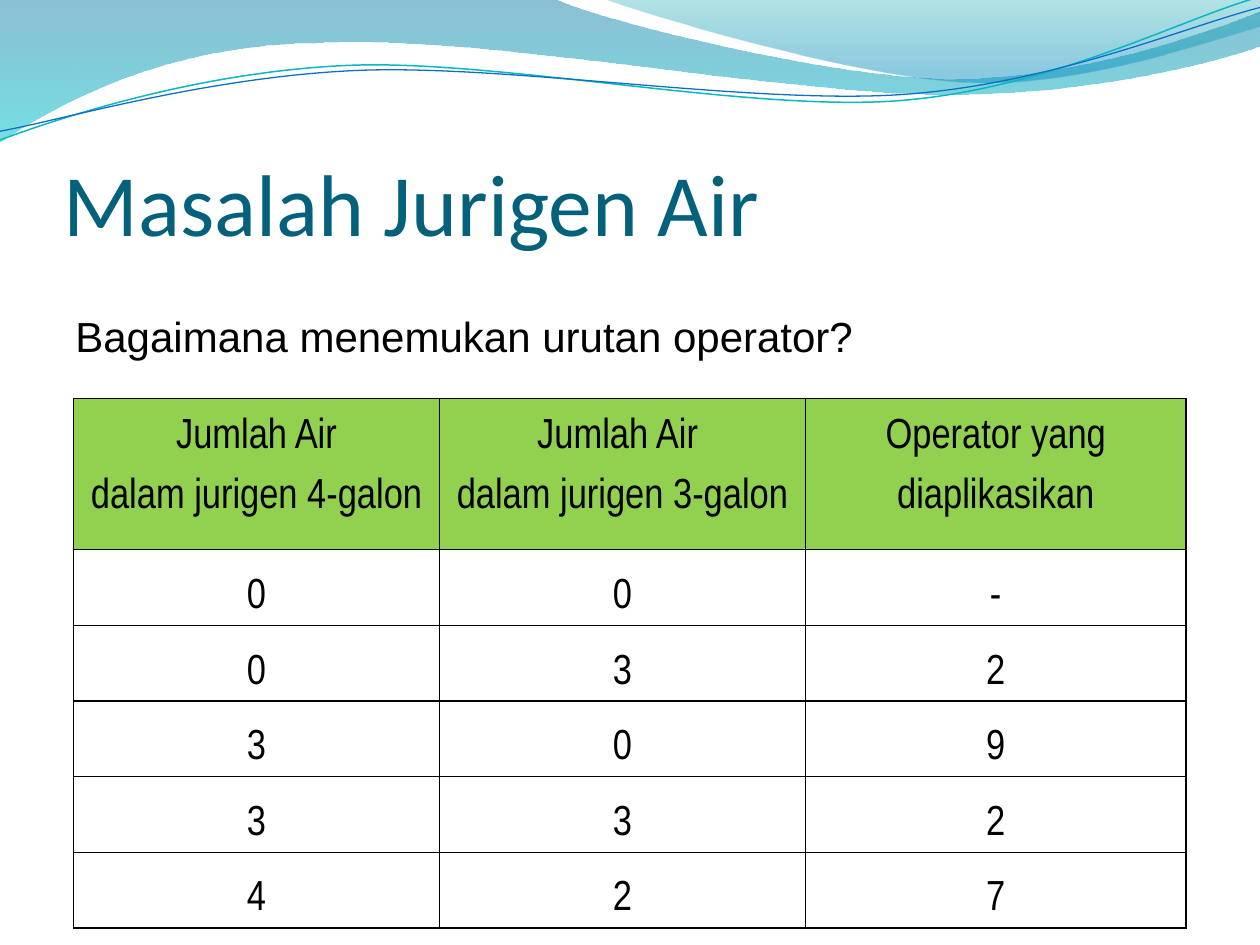
from lxml.etree import SubElement
from pptx import Presentation
from pptx.dml.color import RGBColor
from pptx.enum.text import MSO_ANCHOR as Anchor, MSO_AUTO_SIZE as AutoSize, PP_ALIGN as Align
from pptx.oxml.ns import qn
from pptx.util import Pt

BLACK = RGBColor(0x00, 0x00, 0x00)
TITLE_BLUE = RGBColor(0x04, 0x61, 0x7B)
HEADER_GREEN = RGBColor(0x92, 0xD0, 0x50)
DEEP_BLUE = RGBColor(0x00, 0x74, 0xA1)
CYAN = RGBColor(0x00, 0xC6, 0xCF)
TEAL = RGBColor(0x00, 0xA1, 0xA9)
SKY_BLUE = RGBColor(0x00, 0x8B, 0xBF)
LINE_TEAL = RGBColor(0x0A, 0xB8, 0xBF)
LINE_BLUE = RGBColor(0x0F, 0x6F, 0xC6)

LARGE_WAVE = [
    [(0, -0.7)],
    [(317, -0.7)],
    [(343, 12), (478, 45), (546, 45)],
    [(614, 45), (690, 19), (720, 6.5)],
    [(721, 26)],
    [(708, 32), (626, 55), (537, 54)],
    [(448, 54), (275, 20), (185, 24.5)],
    [(93, 25), (33, 60), (-0.7, 81.4)],
]
SMALL_WAVE = [
    [(345, -0.7)],
    [(367, 8), (491, 44.6), (554, 46.8)],
    [(616, 49.7), (692, 23), (720, 15)],
    [(720, 0)],
]
TEAL_STRAND = [
    [(0, 80)],
    [(35, 67), (114, 41), (199, 37.4)],
    [(284, 33.8), (427, 64), (513, 57.6)],
    [(600, 51), (675, 10.8), (718.5, -1.4)],
]
BLUE_STRAND = [
    [(0, 75)],
    [(34, 69), (118, 44), (204, 40.3)],
    [(290, 36.7), (430, 60), (516, 54)],
    [(602, 48), (678, 15), (720, 4.3)],
]

TITLE_FONT = {"name": "Calibri", "size": Pt(50)}
QUESTION_FONT = {"name": "Arial", "size": Pt(24)}
CELL_FONT = {"name": "Arial Narrow", "size": Pt(24)}
CELL_MARGINS = {"margin_left": Pt(5), "margin_right": Pt(5), "margin_top": 0, "margin_bottom": 0}

COLUMN_WIDTHS = [209.1, 209.1, 217.6]
HEADER_HEIGHT = 80.6
ROW_HEIGHT = 40.3
TABLE_HEIGHT = 302.4
TABLE_ROWS = [
    ["Jumlah Air\ndalam jurigen 4-galon", "Jumlah Air \ndalam jurigen 3-galon",
     "Operator yang diaplikasikan"],
    ["0", "0", "-"],
    ["0", "3", "2"],
    ["3", "0", "9"],
    ["3", "3", "2"],
    ["4", "2", "7"],
]


def set_attributes(target, values):
    for name, value in values.items():
        setattr(target, name, value)


def bend_segments(shape, segments):
    lines = list(shape._element.iter(qn("a:lnTo")))
    for segment in segments:
        group, lines = lines[:len(segment)], lines[len(segment):]
        if len(group) == 3:
            curve = group[0]
            curve.tag = qn("a:cubicBezTo")
            for line in group[1:]:
                curve.append(line[0])
                line.getparent().remove(line)


def add_outline(page, outline, closed):
    start, *rest = [(Pt(x), Pt(y)) for segment in outline for x, y in segment]
    builder = page.shapes.build_freeform(*start)
    builder.add_line_segments(rest, close=closed)
    shape = builder.convert_to_shape()
    bend_segments(shape, outline[1:])
    shape.shadow.inherit = False
    return shape


def add_wave(page, outline, stops):
    shape = add_outline(page, outline, True)
    shape.line.fill.background()
    shape.fill.gradient()
    shape.fill.gradient_angle = 270
    for stop, (position, color, opacity) in zip(shape.fill.gradient_stops, stops):
        stop.position = position
        stop.color.rgb = color
    colors = list(shape._element.spPr.iter(qn("a:srgbClr")))
    for element, (position, color, opacity) in zip(colors, stops):
        SubElement(element, qn("a:alpha"), val=str(opacity * 1000))


def add_strand(page, outline, color, width):
    shape = add_outline(page, outline, False)
    shape.fill.background()
    shape.line.color.rgb = color
    shape.line.width = Pt(width)


def add_text(page, bounds, text, font, color, frame_format):
    box = page.shapes.add_textbox(*map(Pt, bounds))
    frame = box.text_frame
    set_attributes(frame, {"word_wrap": True, **frame_format})
    span = frame.paragraphs[0].add_run()
    span.text = text
    set_attributes(span.font, font)
    span.font.color.rgb = color


def add_borders(cell):
    properties = cell._tc.get_or_add_tcPr()
    for side in ("lnL", "lnR", "lnT", "lnB"):
        border = SubElement(properties, qn(f"a:{side}"), w=str(Pt(1)))
        fill = SubElement(border, qn("a:solidFill"))
        SubElement(fill, qn("a:srgbClr"), val=str(BLACK))


def format_paragraph_end(para):
    ending = SubElement(para._p, qn("a:endParaRPr"), sz=str(int(CELL_FONT["size"].pt * 100)))
    SubElement(ending, qn("a:latin"), typeface=CELL_FONT["name"])


def fill_cell(cell, text, is_header):
    cell.text = text
    set_attributes(cell, CELL_MARGINS)
    cell.vertical_anchor = Anchor.TOP if is_header else Anchor.MIDDLE
    for para in cell.text_frame.paragraphs:
        set_attributes(para, {"alignment": Align.CENTER, "line_spacing": 1.5})
        for span in para.runs:
            set_attributes(span.font, CELL_FONT)
            span.font.color.rgb = BLACK
        format_paragraph_end(para)
    add_borders(cell)
    if is_header:
        cell.fill.solid()
        cell.fill.fore_color.rgb = HEADER_GREEN
    else:
        cell.fill.background()


def add_operator_table(page, left, top):
    heights = [HEADER_HEIGHT] + [ROW_HEIGHT] * (len(TABLE_ROWS) - 1)
    bounds = (left, top, sum(COLUMN_WIDTHS), TABLE_HEIGHT)
    frame = page.shapes.add_table(len(heights), len(COLUMN_WIDTHS), *map(Pt, bounds))
    table = frame.table
    set_attributes(table, {"first_row": False, "horz_banding": False})
    for column, width in zip(table.columns, COLUMN_WIDTHS):
        column.width = Pt(width)
    for row, height, texts in zip(table.rows, heights, TABLE_ROWS):
        row.height = Pt(height)
        for cell, text in zip(row.cells, texts):
            fill_cell(cell, text, texts is TABLE_ROWS[0])
    frame.height = Pt(TABLE_HEIGHT)


def main():
    deck = Presentation()
    deck.slide_width, deck.slide_height = Pt(720), Pt(540)
    page = deck.slides.add_slide(deck.slide_layouts[6])
    add_wave(page, LARGE_WAVE, [(0, DEEP_BLUE, 45), (1, CYAN, 55)])
    add_wave(page, SMALL_WAVE, [(0, TEAL, 30), (0.8, SKY_BLUE, 45)])
    add_strand(page, TEAL_STRAND, LINE_TEAL, 0.85)
    add_strand(page, BLUE_STRAND, LINE_BLUE, 0.75)
    add_text(page, (36.3, 55.4, 654, 90), "Masalah Jurigen Air", TITLE_FONT, TITLE_BLUE,
             {"vertical_anchor": Anchor.BOTTOM, "margin_left": 0, "margin_right": 0,
              "margin_bottom": 0})
    add_operator_table(page, 42, 227.7)
    add_text(page, (36, 174.2, 480, 36), "Bagaimana menemukan urutan operator?",
             QUESTION_FONT, BLACK, {"auto_size": AutoSize.SHAPE_TO_FIT_TEXT})
    deck.save("out.pptx")


if __name__ == "__main__":
    main()
